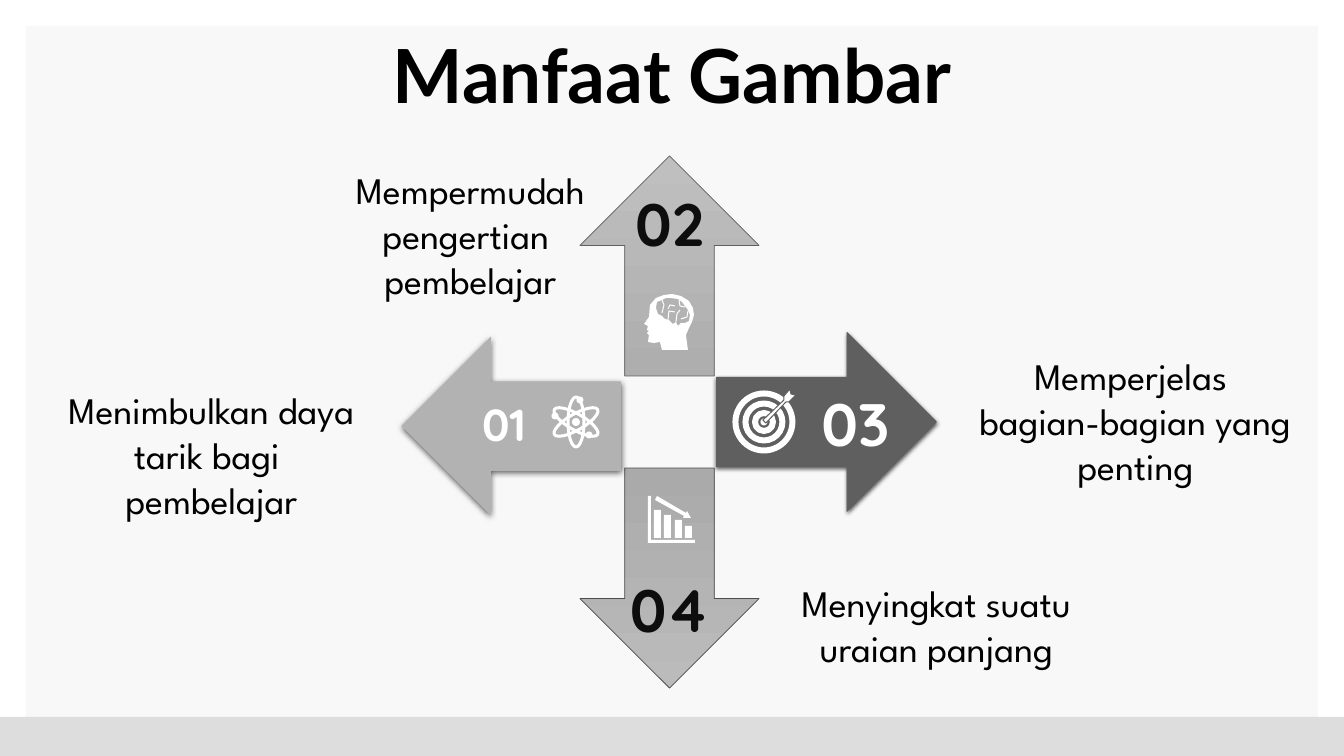
from dataclasses import dataclass
from typing import Optional

from lxml.etree import SubElement
from pptx import Presentation
from pptx.dml.color import RGBColor
from pptx.enum.shapes import MSO_SHAPE as Preset
from pptx.enum.text import MSO_ANCHOR as Anchor, PP_ALIGN as Align
from pptx.oxml.ns import qn
from pptx.util import Emu, Pt

SLIDE_WIDTH, SLIDE_HEIGHT = 1344, 756
EMU_PER_PX = 12192000 / SLIDE_WIDTH
ARROW_SIZE = (179, 220)
Points = list[tuple[int, int]]


@dataclass(frozen=True)
class Theme:
    backdrop: str = "F8F8F8"
    footer: str = "DDDDDD"
    ink: str = "000000"
    dark_number: str = "0D0D0D"
    white: str = "FFFFFF"
    dark_arrow: str = "5F5F5F"
    title_font: str = "Lato"
    body_font: str = "League Spartan"
    number_font: str = "Quicksand"
    title_size: float = 53.3
    body_size: float = 26.7
    number_size: float = 42.7
    small_number_size: float = 32


THEME = Theme()


@dataclass(frozen=True)
class Label:
    box: tuple[int, int, int, int]
    lines: list[str]
    font: str = THEME.body_font
    size: float = THEME.body_size
    color: str = THEME.ink
    bold: bool = False
    anchor: Anchor = Anchor.TOP
    space_before: int = 0


@dataclass(frozen=True)
class Arrow:
    left: int
    top: int
    rotation: int
    colors: tuple[str, str]
    line: Optional[str] = None
    shadow: Optional[tuple[float, float]] = None


@dataclass(frozen=True)
class Ellipse:
    center: tuple[int, int]
    width: int
    height: int
    stroke: int = 0
    rotation: int = 0


@dataclass(frozen=True)
class Outline:
    contours: list[Points]
    line: Optional[str] = None
    filled: bool = True


def px(length: float) -> Emu:
    return Emu(round(length * EMU_PER_PX))


def rgb(color: str) -> RGBColor:
    return RGBColor.from_string(color)


def add_preset(slide, preset: Preset, left: float, top: float, width: int, height: int):
    shape = slide.shapes.add_shape(preset, px(left), px(top), px(width), px(height))
    shape.shadow.inherit = False
    shape.line.fill.background()
    return shape


def draw_panel(slide, box: tuple[int, int, int, int], color: str) -> None:
    shape = add_preset(slide, Preset.RECTANGLE, *box)
    shape.fill.solid()
    shape.fill.fore_color.rgb = rgb(color)


def draw_label(slide, label: Label) -> None:
    frame = slide.shapes.add_textbox(*map(px, label.box)).text_frame
    frame.word_wrap = True
    frame.vertical_anchor = label.anchor
    frame.text = "\n".join(label.lines)
    for paragraph in frame.paragraphs:
        paragraph.alignment = Align.CENTER
        paragraph.space_before = Pt(label.space_before)
        font = paragraph.font
        font.name, font.size, font.bold = label.font, Pt(label.size), label.bold
        font.color.rgb = rgb(label.color)


def add_shadow(shape, blur: float, distance: float) -> None:
    effects = shape._element.spPr.find(qn("a:effectLst"))
    shadow = SubElement(effects, qn("a:outerShdw"), blurRad=str(Pt(blur)),
                        dist=str(Pt(distance)), dir="5400000", rotWithShape="0")
    color = SubElement(shadow, qn("a:srgbClr"), val=THEME.ink)
    SubElement(color, qn("a:alpha"), val="63000")


def draw_arrow(slide, arrow: Arrow) -> None:
    shape = add_preset(slide, Preset.UP_ARROW, arrow.left, arrow.top, *ARROW_SIZE)
    shape.rotation = arrow.rotation
    shape.fill.gradient()
    shape.fill.gradient_angle = 270
    for stop, color, position in zip(shape.fill.gradient_stops, arrow.colors, (0, 1)):
        stop.color.rgb = rgb(color)
        stop.position = position
    if arrow.line:
        shape.line.color.rgb = rgb(arrow.line)
        shape.line.width = Pt(0.5)
    if arrow.shadow:
        add_shadow(shape, *arrow.shadow)


def draw_ellipse(slide, ellipse: Ellipse) -> None:
    (x, y), width, height = ellipse.center, ellipse.width, ellipse.height
    shape = add_preset(slide, Preset.OVAL, x - width / 2, y - height / 2, width, height)
    shape.rotation = ellipse.rotation
    if ellipse.stroke:
        shape.fill.background()
        shape.line.color.rgb = rgb(THEME.white)
        shape.line.width = px(ellipse.stroke)
    else:
        shape.fill.solid()
        shape.fill.fore_color.rgb = rgb(THEME.white)


def draw_outline(slide, outline: Outline) -> None:
    first, *others = outline.contours
    builder = slide.shapes.build_freeform(*first[0], scale=EMU_PER_PX)
    builder.add_line_segments(first[1:], close=outline.filled)
    for contour in others:
        builder.move_to(*contour[0])
        builder.add_line_segments(contour[1:], close=outline.filled)
    shape = builder.convert_to_shape()
    shape.shadow.inherit = False
    if outline.filled:
        shape.fill.solid()
        shape.fill.fore_color.rgb = rgb(THEME.white)
    else:
        shape.fill.background()
    if outline.line:
        shape.line.color.rgb = rgb(outline.line)
        shape.line.width = px(1)
    else:
        shape.line.fill.background()


def number(text: str, left: int, top: int, color: str) -> Label:
    return Label((left, top, 125, 83), [text], THEME.number_font, THEME.number_size,
                 color, True, Anchor.MIDDLE)


def chart_bar(index: int, top: int) -> Points:
    left = 654 + round(index * 10.4)
    return [(left, top), (left + 7, top), (left + 7, 538), (left, 538)]


ARROWS = [
    Arrow(580, 156, 0, ("BFBFBF", "AEAEAE"), THEME.dark_arrow),
    Arrow(737, 312, 90, (THEME.dark_arrow, "5E5E5E"), THEME.dark_arrow, (3, 1)),
    Arrow(580, 468, 180, ("BBBBBB", "AAAAAA"), "4D4D4D"),
    Arrow(422, 316, 270, ("B2B2B2", "B0B0B0"), shadow=(4.5, 1.5)),
]
LABELS = [
    Label((0, 18, SLIDE_WIDTH, 111), ["Manfaat Gambar"], THEME.title_font,
          THEME.title_size, bold=True, anchor=Anchor.MIDDLE, space_before=9),
    number("02", 607, 181, THEME.dark_number),
    number("03", 793, 381, THEME.white),
    number("04", 607, 567, THEME.dark_number),
    Label((455, 392, 98, 65), ["01"], THEME.number_font, THEME.small_number_size,
          THEME.white, True),
    Label((753, 575, 367, 101), ["Menyingkat suatu uraian panjang"]),
    Label((943, 348, 385, 146), ["Memperjelas ", "bagian-bagian yang penting"]),
    Label((28, 382, 367, 146), ["Menimbulkan daya tarik bagi ", "pembelajar"]),
    Label((308, 162, 325, 146), ["Mempermudah pengertian ", "pembelajar"]),
]
ATOM_CENTER, TARGET_CENTER = (576, 422), (764, 422)
ELLIPSES = [
    *(Ellipse(ATOM_CENTER, 16, 50, 3, angle) for angle in (0, 60, 120)),
    Ellipse(ATOM_CENTER, 8, 8),
    *(Ellipse(electron, 7, 7) for electron in ((555, 416), (580, 400), (589, 435))),
    *(Ellipse(TARGET_CENTER, size, size, 6) for size in (57, 37, 18)),
    Ellipse(TARGET_CENTER, 7, 7),
]
HEAD = [(672, 294), (681, 296), (689, 301), (693, 308), (694, 315), (692, 322), (689, 328),
        (686, 335), (688, 350), (662, 350), (660, 342), (654, 343), (648, 342), (649, 335),
        (647, 333), (649, 331), (647, 330), (648, 326), (644, 324), (649, 317), (650, 305),
        (656, 298), (664, 295)]
BRAIN = [(670, 298), (666, 298), (662, 300), (657, 302), (656, 308), (658, 314), (662, 316),
         (665, 319), (669, 320), (673, 324), (676, 322), (678, 326), (681, 323), (685, 323),
         (689, 321), (690, 315), (688, 310), (685, 306), (682, 302), (678, 299)]
BRAIN_FOLDS = [[(662, 300), (664, 305), (662, 313)], [(668, 320), (669, 311), (675, 312)],
               [(668, 309), (670, 305), (675, 306)], [(679, 300), (680, 306), (685, 307)],
               [(676, 322), (677, 314), (680, 310)], [(681, 319), (687, 317), (688, 311)]]
CHART_AXES = [(648, 496), (651, 496), (651, 540), (695, 540), (695, 543), (648, 543)]
CHART_TREND = [(657, 496), (686, 513), (687, 511), (691, 518), (683, 518), (684, 516), (655, 500)]
DART = [(790, 389), (791, 394), (796, 395), (789, 402), (786, 402), (766, 423), (763, 420),
        (784, 400), (784, 396)]
OUTLINES = [
    Outline([HEAD, BRAIN]),
    Outline(BRAIN_FOLDS, THEME.white, filled=False),
    Outline([CHART_AXES, CHART_TREND,
             *(chart_bar(index, top) for index, top in enumerate((510, 515, 520, 526)))]),
    Outline([DART], THEME.dark_arrow),
]


def main() -> None:
    presentation = Presentation()
    presentation.slide_width, presentation.slide_height = px(SLIDE_WIDTH), px(SLIDE_HEIGHT)
    slide = presentation.slides.add_slide(presentation.slide_layouts[6])
    draw_panel(slide, (26, 26, 1292, 704), THEME.backdrop)
    draw_panel(slide, (0, 717, SLIDE_WIDTH, 39), THEME.footer)
    for items, draw in ((ARROWS, draw_arrow), (LABELS, draw_label),
                        (ELLIPSES, draw_ellipse), (OUTLINES, draw_outline)):
        for item in items:
            draw(slide, item)
    presentation.save("out.pptx")


if __name__ == "__main__":
    main()
